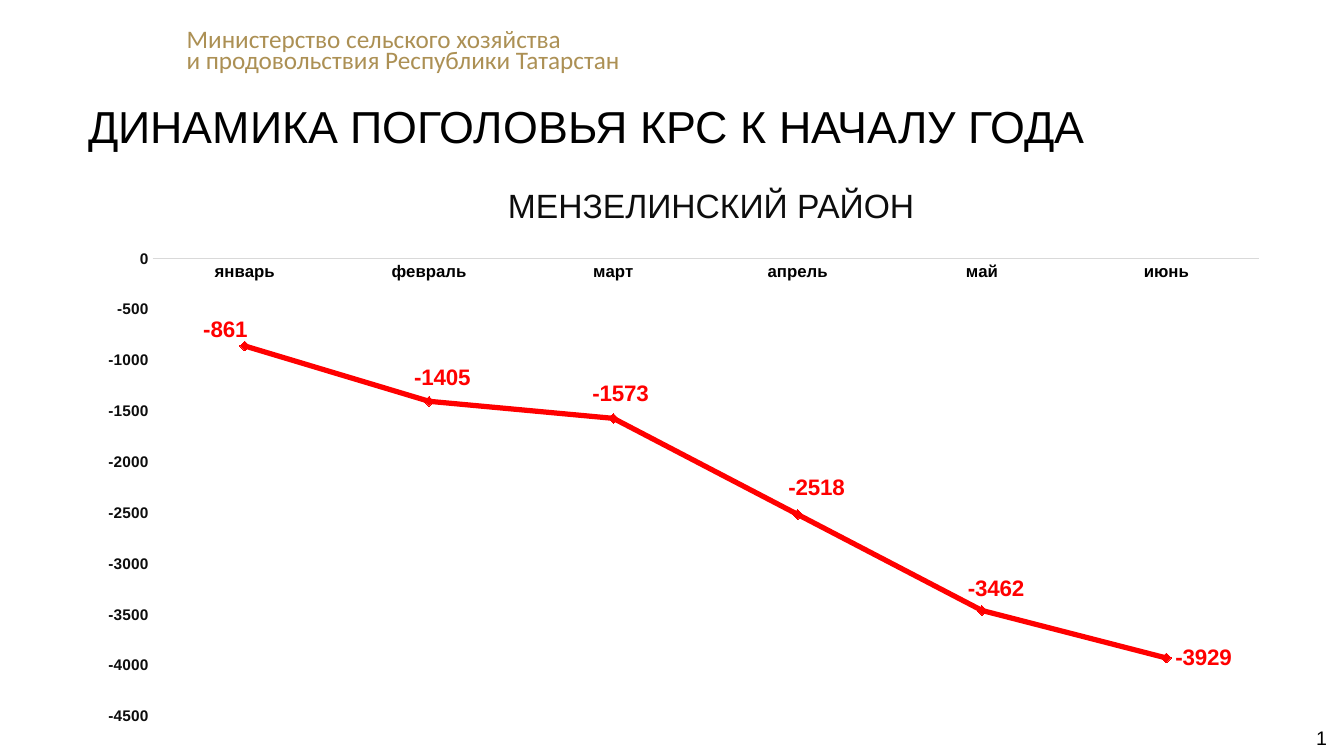
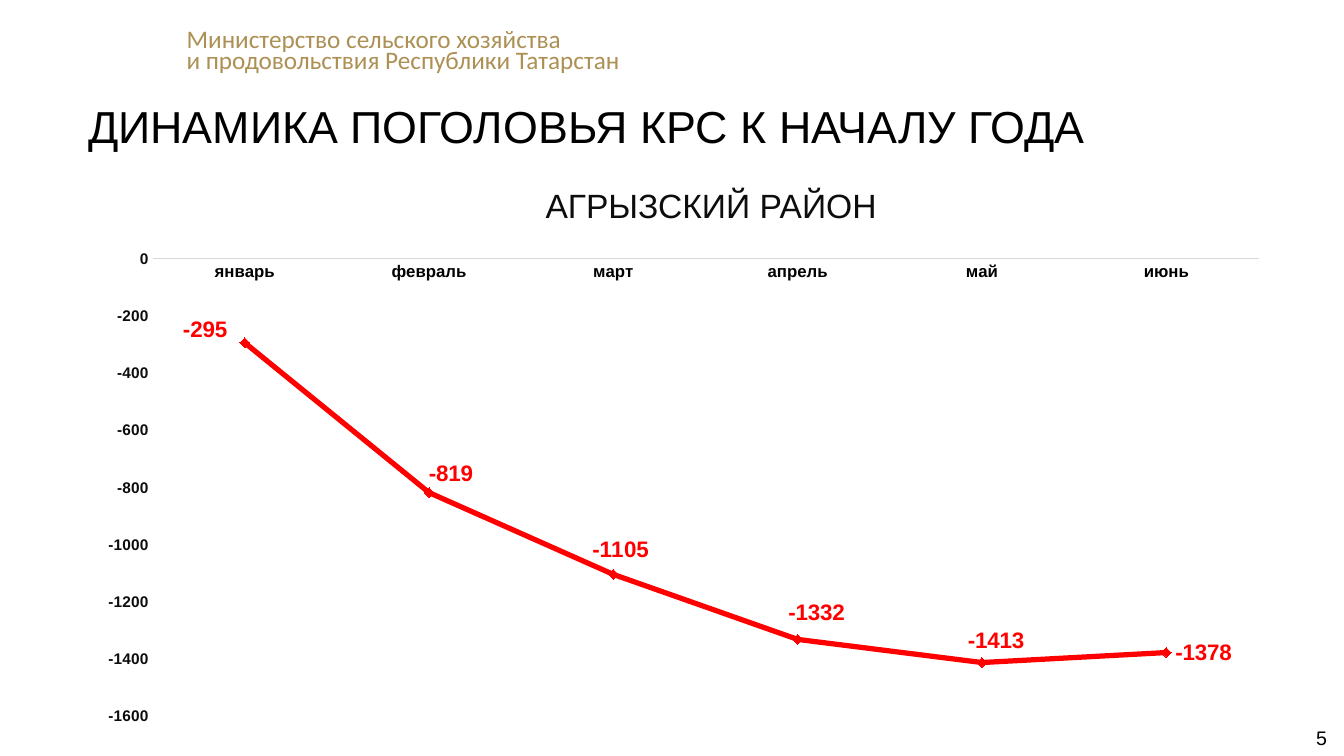
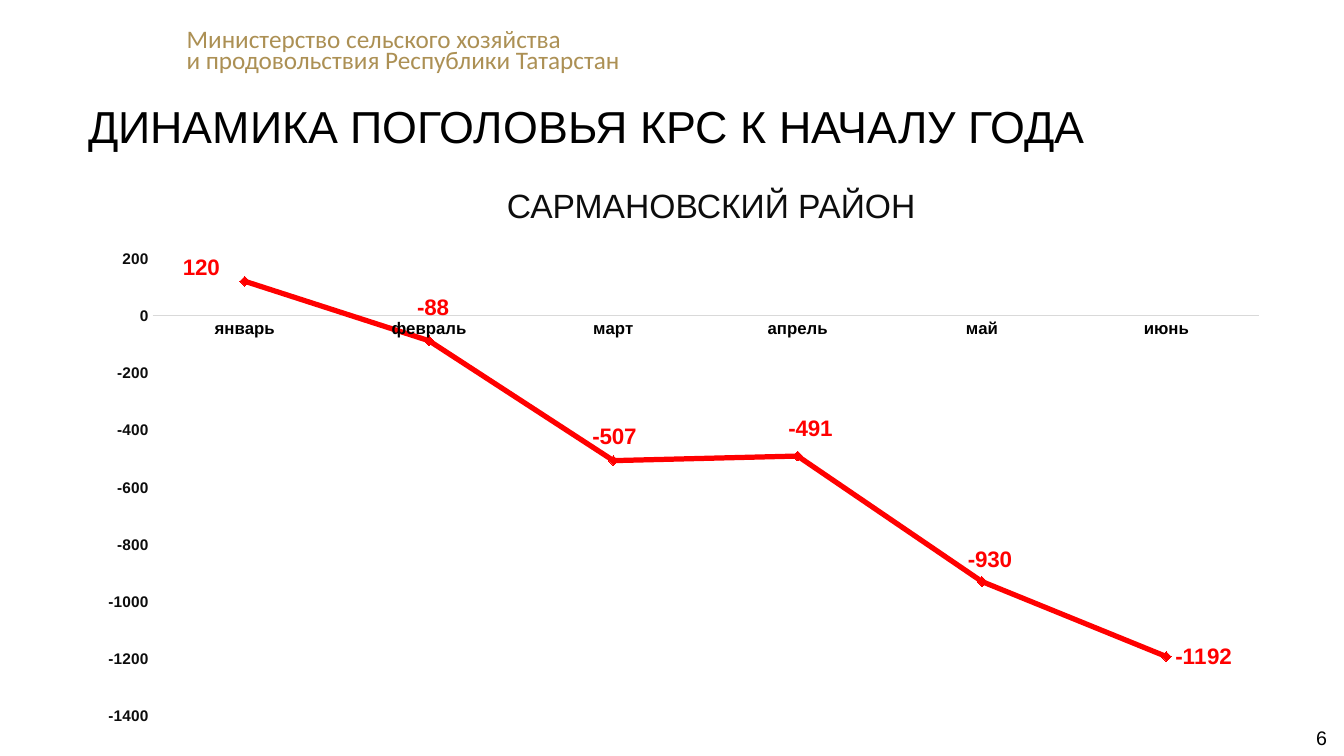
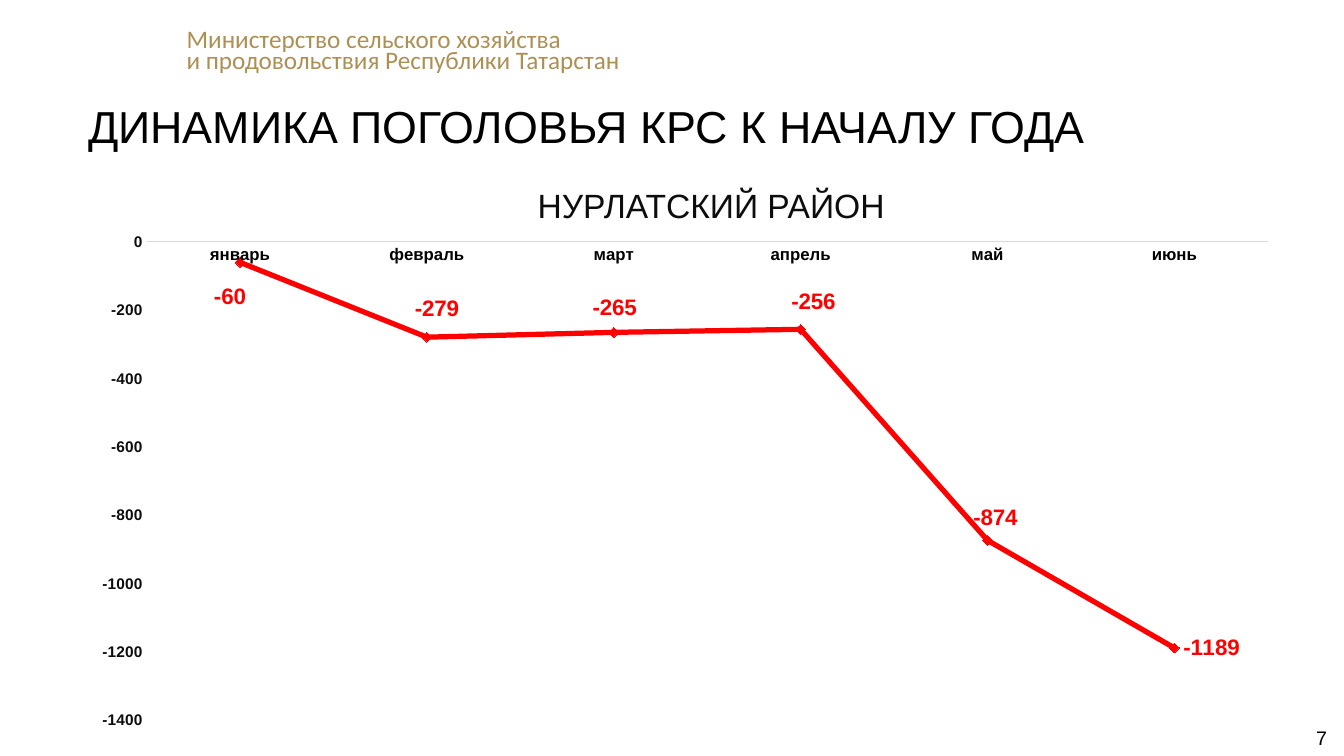
from dataclasses import dataclass

from pptx import Presentation
from pptx.chart.chart import Chart
from pptx.chart.data import CategoryChartData
from pptx.dml.color import RGBColor
from pptx.enum.chart import XL_CHART_TYPE, XL_LABEL_POSITION, XL_MARKER_STYLE, XL_TICK_MARK
from pptx.enum.text import MSO_ANCHOR, MSO_AUTO_SIZE, PP_ALIGN
from pptx.oxml import parse_xml
from pptx.oxml.ns import nsdecls, qn
from pptx.slide import Slide
from pptx.text.text import Font, TextFrame
from pptx.util import Pt

LINE_MARKERS = XL_CHART_TYPE.LINE_MARKERS
LABEL_RIGHT = XL_LABEL_POSITION.RIGHT
DIAMOND = XL_MARKER_STYLE.DIAMOND
NO_TICK = XL_TICK_MARK.NONE
TOP = MSO_ANCHOR.TOP
GROW = MSO_AUTO_SIZE.SHAPE_TO_FIT_TEXT
LEFT, CENTER = PP_ALIGN.LEFT, PP_ALIGN.CENTER


@dataclass(frozen=True)
class TextStyle:
    size: float
    color: RGBColor
    font: str = "Arial"
    bold: bool = False


@dataclass(frozen=True)
class Theme:
    red: RGBColor = RGBColor(0xFF, 0x00, 0x00)
    axis_line: RGBColor = RGBColor(0xD9, 0xD9, 0xD9)
    ministry: TextStyle = TextStyle(18, RGBColor(0xAC, 0x90, 0x54), "Calibri")
    title: TextStyle = TextStyle(32, RGBColor(0, 0, 0))
    district: TextStyle = TextStyle(24, RGBColor(0x0D, 0x0D, 0x0D))
    number: TextStyle = TextStyle(14, RGBColor(0, 0, 0))
    chart: TextStyle = TextStyle(10, RGBColor(0, 0, 0), "Calibri")
    months: TextStyle = TextStyle(12, RGBColor(0, 0, 0), bold=True)
    scale: TextStyle = TextStyle(11, RGBColor(0x0D, 0x0D, 0x0D), bold=True)
    label: TextStyle = TextStyle(16, RGBColor(0xFF, 0x00, 0x00), bold=True)


@dataclass(frozen=True)
class Frame:
    left: float
    top: float
    width: float
    height: float


@dataclass(frozen=True)
class Offset:
    x: float
    y: float


@dataclass(frozen=True)
class District:
    number: int
    name: str
    values: tuple[int, ...]
    lowest: int
    highest: int
    step: int
    early_labels: tuple[Offset, Offset]
    chart: Frame = Frame(60.2, 171, 856, 354.2)
    plot: Frame = Frame(48.8, 13.6, 790, 327)


THEME = Theme()
TITLE = "ДИНАМИКА ПОГОЛОВЬЯ КРС К НАЧАЛУ ГОДА"
MINISTRY = "Министерство сельского хозяйства\nи продовольствия Республики Татарстан"
MONTHS = ("январь", "февраль", "март", "апрель", "май", "июнь")
LATER_LABELS = (Offset(-21.5, -17.5), Offset(-13, -19.5), Offset(-16.5, -16))
INDENT = 13.5

MINISTRY_FRAME = Frame(126.2, 18.7, 327.6, 38.9)
TITLE_FRAME = Frame(42.2, 67, 918, 46)
DISTRICT_FRAME = Frame(42.2, 128.2, 918, 36)
NUMBER_FRAME = Frame(934.6, 518.4, 18.7, 16.6)

DISTRICTS = (
    District(1, "МЕНЗЕЛИНСКИЙ РАЙОН", (-861, -1405, -1573, -2518, -3462, -3929),
             -4500, 0, 500, (Offset(-36, -11.5), Offset(-17, -17))),
    District(5, "АГРЫЗСКИЙ РАЙОН", (-295, -819, -1105, -1332, -1413, -1378),
             -1600, 0, 200, (Offset(-50.5, -9.5), Offset(-6.5, -13.5))),
    District(6, "САРМАНОВСКИЙ РАЙОН", (120, -88, -507, -491, -930, -1192),
             -1400, 200, 200, (Offset(-50.5, -9.5), Offset(-15, -23.5))),
    District(7, "НУРЛАТСКИЙ РАЙОН", (-60, -279, -265, -256, -874, -1189),
             -1400, 0, 200, (Offset(-25, 24.5), Offset(-15, -20.5)),
             Frame(60.2, 164.5, 856, 360.7), Frame(44.5, 8.3, 801, 341.6)),
)


def style_font(font: Font, style: TextStyle) -> None:
    font.name = style.font
    font.size = Pt(style.size)
    font.bold = style.bold
    font.color.rgb = style.color


def place(shape, frame: Frame) -> None:
    shape.left, shape.top = Pt(frame.left), Pt(frame.top)
    shape.width, shape.height = Pt(frame.width), Pt(frame.height)


def fill_text(text_frame: TextFrame, text: str, style: TextStyle, align: PP_ALIGN = LEFT,
              indent: float = 0, spacing: float = 1, wrap: bool = True) -> None:
    text_frame.text = text
    text_frame.word_wrap = wrap
    text_frame.auto_size = GROW
    text_frame.vertical_anchor = TOP
    for para in text_frame.paragraphs:
        para.alignment = align
        para.line_spacing = spacing
        if indent:
            properties = para._p.get_or_add_pPr()
            properties.set("marL", str(Pt(indent)))
            properties.set("indent", "0")
        for span in para.runs:
            style_font(span.font, style)


def add_box(page: Slide, frame: Frame):
    box = page.shapes.add_textbox(0, 0, 0, 0)
    place(box, frame)
    return box


def layout_xml(chart_frame: Frame, offset: Offset):
    return parse_xml(
        f'<c:layout {nsdecls("c")}><c:manualLayout>'
        f'<c:x val="{offset.x / chart_frame.width:.4f}"/>'
        f'<c:y val="{offset.y / chart_frame.height:.4f}"/>'
        '</c:manualLayout></c:layout>')


def plot_layout_xml(chart_frame: Frame, plot: Frame):
    return parse_xml(
        f'<c:layout {nsdecls("c")}><c:manualLayout><c:layoutTarget val="inner"/>'
        '<c:xMode val="edge"/><c:yMode val="edge"/>'
        f'<c:x val="{plot.left / chart_frame.width:.4f}"/>'
        f'<c:y val="{plot.top / chart_frame.height:.4f}"/>'
        f'<c:w val="{plot.width / chart_frame.width:.4f}"/>'
        f'<c:h val="{plot.height / chart_frame.height:.4f}"/>'
        '</c:manualLayout></c:layout>')


def style_axes(chart: Chart, district: District) -> None:
    months, scale = chart.category_axis, chart.value_axis
    for axis, style in ((months, THEME.months), (scale, THEME.scale)):
        axis.major_tick_mark = axis.minor_tick_mark = NO_TICK
        axis.has_major_gridlines = False
        style_font(axis.tick_labels.font, style)
    months.format.line.color.rgb = THEME.axis_line
    months.format.line.width = Pt(0.75)
    scale.format.line.fill.background()
    scale.minimum_scale = district.lowest
    scale.maximum_scale = district.highest
    scale.major_unit = district.step


def hide_leader_lines(chart: Chart) -> None:
    for labels in chart.element.iter(qn("c:dLbls")):
        for old in labels.findall(qn("c:showLeaderLines")):
            labels.remove(old)
        labels.find(qn("c:showBubbleSize")).addnext(
            parse_xml(f'<c:showLeaderLines {nsdecls("c")} val="0"/>'))


def style_series(chart: Chart, district: District) -> None:
    plot = chart.plots[0]
    plot.vary_by_categories = False
    series = plot.series[0]
    series.smooth = False
    series.format.line.color.rgb = THEME.red
    series.format.line.width = Pt(3.75)
    marker = series.marker
    marker.style, marker.size = DIAMOND, 7
    marker.format.fill.solid()
    marker.format.fill.fore_color.rgb = THEME.red
    marker.format.line.color.rgb = THEME.red

    labels = series.data_labels
    labels.show_value = True
    labels.position = LABEL_RIGHT
    style_font(labels.font, THEME.label)
    offsets = district.early_labels + LATER_LABELS
    for index in range(len(offsets)):
        label = series.points[index].data_label
        style_font(label.font, THEME.label)
        label.position = LABEL_RIGHT
    for element, offset in zip(chart.element.iter(qn("c:dLbl")), offsets):
        element.find(qn("c:idx")).addnext(layout_xml(district.chart, offset))
    hide_leader_lines(chart)


def add_herd_chart(page: Slide, district: District) -> None:
    data = CategoryChartData()
    data.categories = MONTHS
    data.add_series("Series 1", district.values)
    frame = district.chart
    chart = page.shapes.add_chart(LINE_MARKERS, Pt(frame.left), Pt(frame.top),
                                  Pt(frame.width), Pt(frame.height), data).chart
    chart.has_title = chart.has_legend = False
    style_font(chart.font, THEME.chart)
    style_axes(chart, district)
    style_series(chart, district)
    plot_area = next(chart.element.iter(qn("c:plotArea")))
    for old in plot_area.findall(qn("c:layout")):
        plot_area.remove(old)
    plot_area.insert(0, plot_layout_xml(frame, district.plot))


def add_shared_header(page: Slide) -> None:
    box = add_box(page, MINISTRY_FRAME)
    fill_text(box.text_frame, MINISTRY, THEME.ministry, spacing=0.7, wrap=False)
    page.slide_layout.shapes.element.append(box.element)


def add_district_page(page: Slide, district: District) -> None:
    title = page.shapes.title
    place(title, TITLE_FRAME)
    fill_text(title.text_frame, TITLE, THEME.title, indent=INDENT)

    number = add_box(page, NUMBER_FRAME).text_frame
    number.margin_left = number.margin_right = number.margin_top = number.margin_bottom = 0
    fill_text(number, str(district.number), THEME.number, CENTER, wrap=False)

    add_herd_chart(page, district)
    name = add_box(page, DISTRICT_FRAME)
    fill_text(name.text_frame, district.name, THEME.district, CENTER, INDENT)


def main() -> None:
    deck = Presentation()
    deck.slide_width, deck.slide_height = Pt(960), Pt(540)
    title_only = deck.slide_layouts.get_by_name("Title Only")
    for district in DISTRICTS:
        page = deck.slides.add_slide(title_only)
        if district is DISTRICTS[0]:
            add_shared_header(page)
        add_district_page(page, district)
    deck.save("out.pptx")


if __name__ == "__main__":
    main()
